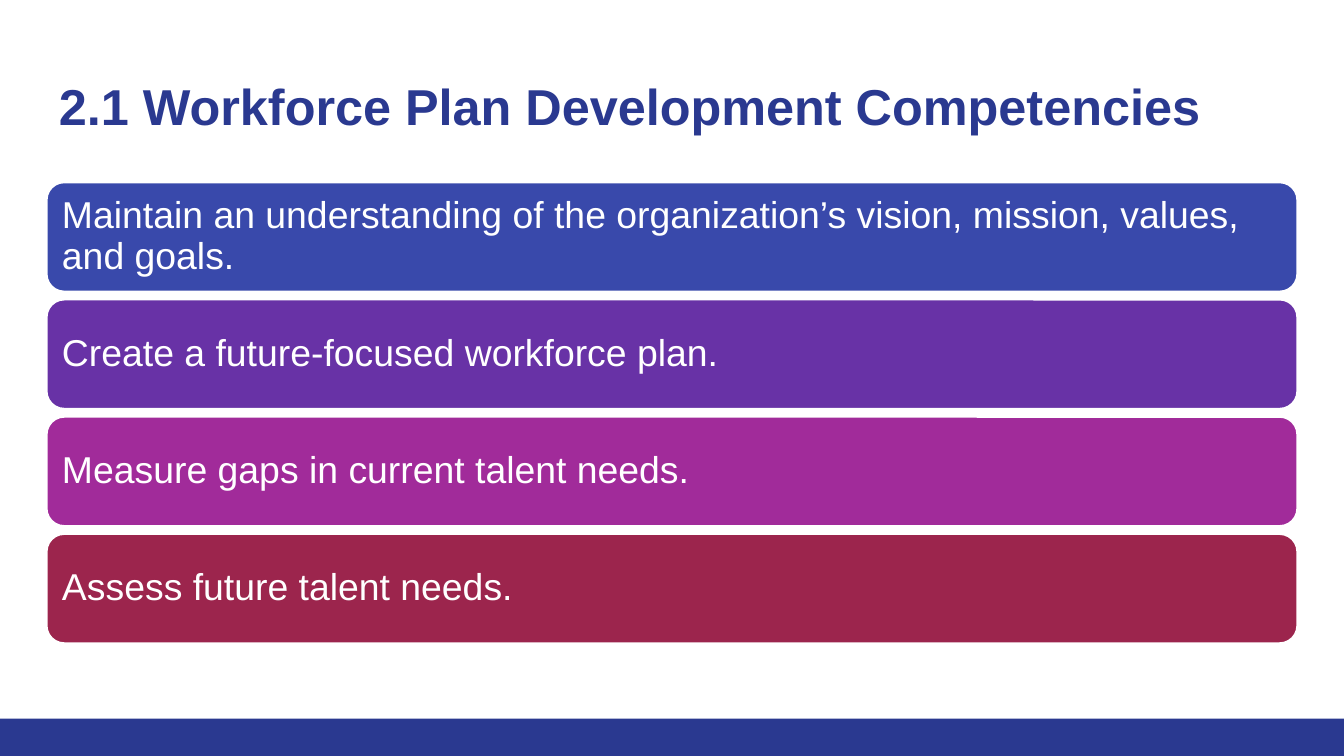
from pptx import Presentation
from pptx.dml.color import RGBColor
from pptx.enum.shapes import MSO_SHAPE
from pptx.enum.text import MSO_ANCHOR, PP_ALIGN
from pptx.util import Pt

TITLE = "2.1 Workforce Plan Development Competencies"
CARDS = [
    ("Maintain an understanding of the organization’s vision, mission, values, and goals.", "3949AB"),
    ("Create a future-focused workforce plan.", "6832A6"),
    ("Measure gaps in current talent needs.", "A12B9A"),
    ("Assess future talent needs.", "9C254D"),
]
NAVY, WHITE = "2A3990", "FFFFFF"
WIDE, HIGH = 720, 405
LEFT, SPAN = 24.5, 671
TOP, CARD, STEP = 97.2, 59.5, 62.8
FOOT = 20


def color(code):
    return RGBColor.from_string(code)


def panel(slide, kind, box, fill, line=None):
    shape = slide.shapes.add_shape(kind, *map(Pt, box))
    shape.shadow.inherit = False
    shape.fill.solid()
    shape.fill.fore_color.rgb = color(fill)
    if line:
        shape.line.color.rgb = color(line)
        shape.line.width = Pt(2)
    else:
        shape.line.fill.background()
    return shape


def write(shape, text, size, ink, inset, anchor, bold=False, space=1.0):
    frame = shape.text_frame
    look = {"word_wrap": True, "vertical_anchor": anchor}
    for side in ("left", "right", "top", "bottom"):
        look[f"margin_{side}"] = Pt(inset)
    para = frame.paragraphs[0]
    run = para.add_run()
    run.text = text
    run.font.color.rgb = color(ink)
    formats = [
        (frame, look),
        (para, {"alignment": PP_ALIGN.LEFT, "line_spacing": space}),
        (run.font, {"name": "Arial", "size": Pt(size), "bold": bold}),
    ]
    for item, values in formats:
        for name, value in values.items():
            setattr(item, name, value)


def main():
    deck = Presentation()
    deck.slide_width, deck.slide_height = Pt(WIDE), Pt(HIGH)
    slide = deck.slides.add_slide(deck.slide_layouts[6])

    panel(slide, MSO_SHAPE.RECTANGLE, (0, HIGH - FOOT, WIDE, FOOT), NAVY)
    title = slide.shapes.add_textbox(*map(Pt, (LEFT, 32.4, SPAN, 47.5)))
    write(title, TITLE, 27, NAVY, 7.2, MSO_ANCHOR.BOTTOM, bold=True)

    for row, (text, fill) in enumerate(CARDS):
        box = (LEFT, TOP + row * STEP, SPAN, CARD)
        card = panel(slide, MSO_SHAPE.ROUNDED_RECTANGLE, box, fill, WHITE)
        write(card, text, 20, WHITE, 5.8, MSO_ANCHOR.MIDDLE, space=0.9)

    deck.save("out.pptx")


if __name__ == "__main__":
    main()
